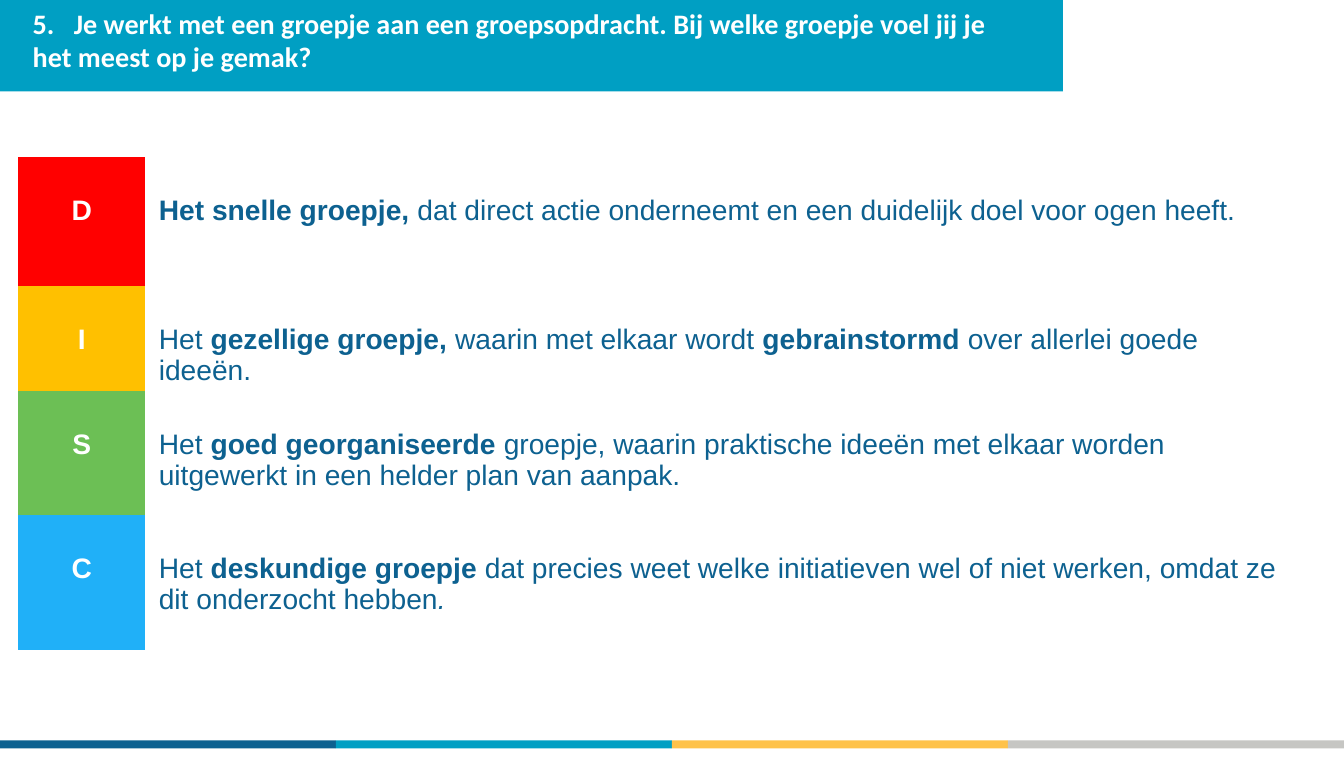
from lxml import etree
from pptx import Presentation
from pptx.dml.color import RGBColor
from pptx.enum.shapes import MSO_SHAPE
from pptx.enum.text import MSO_ANCHOR, MSO_AUTO_SIZE, PP_ALIGN
from pptx.oxml.ns import qn
from pptx.util import Cm, Pt

RECTANGLE = MSO_SHAPE.RECTANGLE
TOP = MSO_ANCHOR.TOP
NO_AUTOFIT = MSO_AUTO_SIZE.NONE
LEFT, CENTER = PP_ALIGN.LEFT, PP_ALIGN.CENTER
PLAIN_TABLE = "{2D5ABB26-0587-4C30-8999-92F81FD0307C}"
SLIDE_WIDTH, SLIDE_HEIGHT = 33.68, 19.05

COLORS = {
    "navy": "0D6190",
    "teal": "009FC3",
    "amber": "FEC24A",
    "grey": "C6C6C3",
    "red": "FF0000",
    "yellow": "FFC000",
    "green": "6CBF55",
    "blue": "20B0F8",
    "white": "FFFFFF",
}
BOLD = {"bold": True}
PLAIN = {"bold": False}
ITALIC = {"bold": False, "italic": True}

TITLE = ("5.\tJe werkt met een groepje aan een groepsopdracht. "
         "Bij welke groepje voel jij je het meest op je gemak?")
# Letter, colour, row height in cm, answer runs
ANSWERS = [
    ("D", "red", 3.23, [
        ("Het snelle groepje, ", BOLD),
        ("dat direct actie onderneemt en een duidelijk doel voor ogen heeft.", PLAIN)]),
    ("I", "yellow", 2.64, [
        ("Het ", PLAIN),
        ("gezellige groepje, ", BOLD),
        ("waarin met elkaar wordt ", PLAIN),
        ("gebrainstormd", BOLD),
        (" over allerlei goede ideeën.", PLAIN)]),
    ("S", "green", 3.1, [
        ("Het ", PLAIN),
        ("goed georganiseerde ", BOLD),
        ("groepje, waarin praktische ideeën met elkaar worden "
         "uitgewerkt in een helder plan van aanpak.", PLAIN)]),
    ("C", "blue", 3.38, [
        ("Het ", PLAIN),
        ("deskundige groepje ", BOLD),
        ("dat precies weet welke initiatieven wel of niet werken, "
         "omdat ze dit onderzocht hebben", PLAIN),
        (".", ITALIC)]),
]


def set_attributes(target, values):
    for name, value in values.items():
        setattr(target, name, value)


def rgb(color):
    return RGBColor.from_string(COLORS[color])


class SlideBuilder:
    """Holds the text style and the slide being built."""

    size = Pt(20)
    cell_format = {"margin_left": Cm(0.34), "margin_right": Cm(0.34),
                   "margin_top": Cm(0.94), "margin_bottom": Cm(0),
                   "vertical_anchor": TOP}

    def __init__(self, slide):
        self.slide = slide

    def add_bar(self, left, top, width, height, color):
        bar = self.slide.shapes.add_shape(
            RECTANGLE, Cm(left), Cm(top), Cm(width), Cm(height))
        bar.shadow.inherit = False
        bar.fill.solid()
        bar.fill.fore_color.rgb = rgb(color)
        bar.line.fill.background()

    def add_runs(self, paragraph, runs, color, font_name, alignment):
        paragraph.alignment = alignment
        for text, style in runs:
            run = paragraph.add_run()
            run.text = text
            set_attributes(run.font, {"name": font_name, "size": self.size, **style})
            run.font.color.rgb = rgb(color)

    def add_title(self, text):
        title = self.slide.shapes.title
        set_attributes(title, {"left": Cm(0.46), "top": Cm(0.15),
                               "width": Cm(25.37), "height": Cm(2)})
        frame = title.text_frame
        set_attributes(frame, {"word_wrap": True, "auto_size": NO_AUTOFIT,
                               "vertical_anchor": TOP,
                               "margin_left": Cm(0.36), "margin_right": Cm(0.25),
                               "margin_top": Cm(0), "margin_bottom": Cm(0)})
        paragraph = frame.paragraphs[0]
        properties = paragraph._p.get_or_add_pPr()
        tabs = etree.SubElement(properties, qn("a:tabLst"))
        etree.SubElement(tabs, qn("a:tab"), pos=str(Cm(1.03)), algn="l")
        self.add_runs(paragraph, [(text, BOLD)], "white", "Calibri", LEFT)
        # The placeholder comes first on a new slide; bring it above the band
        title.element.getparent().append(title.element)

    def add_answer_table(self, answers):
        column_widths = (3.18, 29.18)
        height = sum(row_height for _, _, row_height, _ in answers)
        frame = self.slide.shapes.add_table(
            len(answers), len(column_widths), Cm(0.46), Cm(3.94),
            Cm(sum(column_widths)), Cm(height))
        table = frame.table
        set_attributes(table, {"first_row": False, "horz_banding": False})
        for style_id in frame.element.iter(qn("a:tableStyleId")):
            style_id.text = PLAIN_TABLE
        for column, width in zip(table.columns, column_widths):
            column.width = Cm(width)
        for row, (letter, color, row_height, runs) in zip(table.rows, answers):
            row.height = Cm(row_height)
            letter_cell, answer_cell = row.cells
            for cell in row.cells:
                set_attributes(cell, self.cell_format)
            letter_cell.fill.solid()
            letter_cell.fill.fore_color.rgb = rgb(color)
            answer_cell.fill.background()
            self.add_runs(letter_cell.text_frame.paragraphs[0],
                          [(letter, BOLD)], "white", "Arial", CENTER)
            self.add_runs(answer_cell.text_frame.paragraphs[0],
                          runs, "navy", "Arial", LEFT)


def main():
    presentation = Presentation()
    presentation.slide_width = Cm(SLIDE_WIDTH)
    presentation.slide_height = Cm(SLIDE_HEIGHT)
    title_only = presentation.slide_layouts.get_by_name("Title Only")
    builder = SlideBuilder(presentation.slides.add_slide(title_only))

    footer_colors = ("navy", "teal", "amber", "grey")
    bar_width = SLIDE_WIDTH / len(footer_colors)
    for index, color in enumerate(footer_colors):
        builder.add_bar(index * bar_width, 18.56, bar_width, 0.2, color)
    builder.add_bar(0, 0, 26.64, 2.29, "teal")
    builder.add_answer_table(ANSWERS)
    builder.add_title(TITLE)
    presentation.save("out.pptx")


if __name__ == "__main__":
    main()
